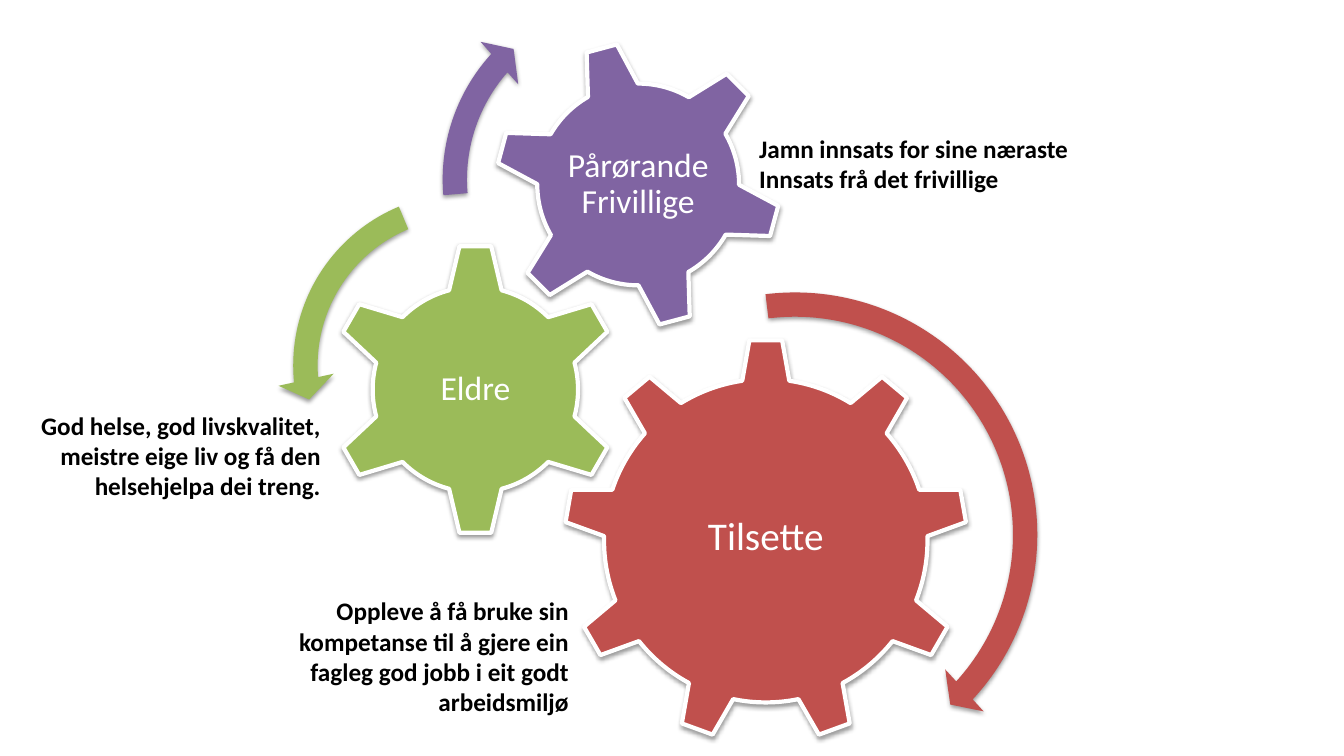
from dataclasses import dataclass

from pptx import Presentation
from pptx import util as u
from pptx.dml.color import RGBColor
from pptx.enum import shapes, text
from pptx.oxml import parse_xml
from pptx.oxml.ns import nsdecls


@dataclass(frozen=True)
class Theme:
    font: str = "Calibri"
    red: str = "C0504D"
    green: str = "9BBB59"
    purple: str = "8064A2"
    white: str = "FFFFFF"
    black: str = "000000"
    large: int = 28
    medium: int = 24
    note: int = 18
    outline: int = 3


THEME = Theme()
SHAPE = shapes.MSO_SHAPE
ALIGN = text.PP_ALIGN


def rgb(code):
    return RGBColor.from_string(code)


def add_shadow(sp):
    """Give a shape a soft shadow straight below it."""
    sp.shadow.inherit = False
    effects = sp._element.spPr.find(
        "{http://schemas.openxmlformats.org/drawingml/2006/main}effectLst")
    effects.append(parse_xml(
        f'<a:outerShdw {nsdecls("a")} blurRad="40000" dist="20000" '
        'dir="5400000" rotWithShape="0"><a:srgbClr val="000000">'
        '<a:alpha val="38000"/></a:srgbClr></a:outerShdw>'))


def add_square(slide, kind, left, top, side, color):
    """Place a filled, shadowed preset shape in a square box."""
    sp = slide.shapes.add_shape(kind, u.Inches(left), u.Inches(top),
                                u.Inches(side), u.Inches(side))
    sp.fill.solid()
    sp.fill.fore_color.rgb = rgb(color)
    add_shadow(sp)
    return sp


def add_text(slide, box, lines, size, color, align, bold=False):
    """Place one paragraph, with line breaks between its lines."""
    tf = slide.shapes.add_textbox(*(u.Inches(v) for v in box)).text_frame
    tf.word_wrap = True
    p = tf.paragraphs[0]
    p.alignment = align
    for i, line in enumerate(lines):
        if i:
            p.add_line_break()
        r = p.add_run()
        r.text = line
        r.font.name = THEME.font
        r.font.size = u.Pt(size)
        r.font.bold = bold
        r.font.color.rgb = rgb(color)
    return tf


def add_gear(slide, kind, box, color, lines, size, label_side,
             rotation=0, lift=0):
    """Draw a gear and centre an upright label on it."""
    left, top, side = box
    sp = add_square(slide, kind, left, top, side, color)
    sp.rotation = rotation
    sp.line.color.rgb = rgb(THEME.white)
    sp.line.width = u.Pt(THEME.outline)

    inset = (side - label_side) / 2
    tf = add_text(slide, (left + inset, top + inset - lift,
                          label_side, label_side),
                  lines, size, THEME.white, ALIGN.CENTER)
    tf.vertical_anchor = text.MSO_ANCHOR.MIDDLE
    tf.margin_left = tf.margin_right = u.Inches(0.03)
    tf.margin_top = tf.margin_bottom = u.Inches(0.03)
    tf.paragraphs[0].line_spacing = 0.9


def add_turn_arrow(slide, kind, box, color, thickness, angles, head):
    """Draw a curved arrow; thickness and head in percent, angles in degrees."""
    sp = add_square(slide, kind, *box, color)
    sp.line.fill.background()
    values = [thickness / 100, *(a * 0.6 for a in angles), head / 100]
    for i, value in enumerate(values):
        sp.adjustments[i] = value


def add_note(slide, box, lines, align):
    """Write a bold note beside a gear."""
    tf = add_text(slide, box, lines, THEME.note, THEME.black, align, bold=True)
    tf.auto_size = text.MSO_AUTO_SIZE.SHAPE_TO_FIT_TEXT


def build_gear_slide(prs):
    slide = prs.slides.add_slide(prs.slide_layouts[6])

    # Gears
    add_gear(slide, SHAPE.GEAR_9, (5.59, 3.36, 4.01), THEME.red,
             ["Tilsette"], THEME.large, 2.4, lift=0.03)
    add_gear(slide, SHAPE.GEAR_6, (3.26, 2.41, 2.91), THEME.green,
             ["Eldre"], THEME.medium, 1.45)
    add_gear(slide, SHAPE.GEAR_6, (4.9, 0.4, 2.86), THEME.purple,
             ["Pårørande", "Frivillige"], THEME.medium, 1.6, rotation=345)

    # Turning arrows
    add_turn_arrow(slide, SHAPE.CIRCULAR_ARROW, (5.32, 2.74, 5.13),
                   THEME.red, 4.7, (4.98, 42.58, 263.01), 5.5)
    add_turn_arrow(slide, SHAPE.LEFT_CIRCULAR_ARROW, (2.75, 1.76, 3.73),
                   THEME.green, 6.5, (7.17, 174.82, 247.3), 7.5)
    add_turn_arrow(slide, SHAPE.CIRCULAR_ARROW, (4.23, -0.23, 4.02),
                   THEME.purple, 6, (6.57, 221.9, 175.14), 7)

    # Notes
    add_note(slide, (0, 4.02, 3.28, 1.01),
             ["God helse, god livskvalitet, meistre eige liv og få den "
              "helsehjelpa dei treng."], ALIGN.RIGHT)
    add_note(slide, (7.43, 1.27, 3.28, 0.71),
             ["Jamn innsats for sine næraste", "Innsats frå det frivillige"],
             ALIGN.LEFT)
    add_note(slide, (2.46, 5.86, 3.28, 1.31),
             ["Oppleve å få bruke sin kompetanse til å gjere ein fagleg god "
              "jobb i eit godt arbeidsmiljø"], ALIGN.RIGHT)


def main():
    prs = Presentation()
    prs.slide_width = u.Inches(13.33)
    prs.slide_height = u.Inches(7.5)
    build_gear_slide(prs)
    prs.save("out.pptx")


if __name__ == "__main__":
    main()
